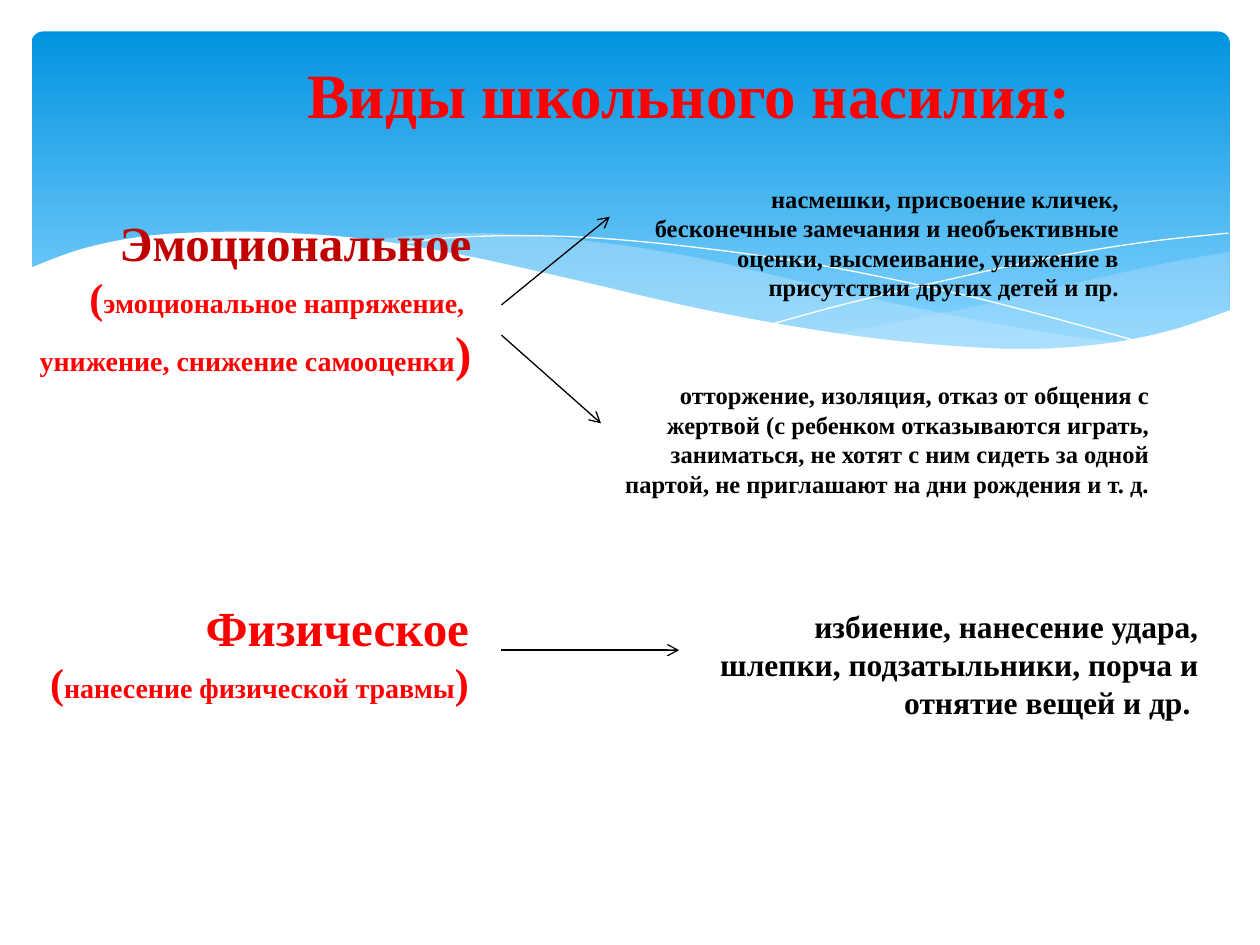
import pptx
import pptx.dml.color
import pptx.enum.shapes
import pptx.enum.text
import pptx.oxml
import pptx.oxml.ns
import pptx.util

Inches = pptx.util.Inches
Pt = pptx.util.Pt
RGBColor = pptx.dml.color.RGBColor

RED = RGBColor(0xFF, 0x00, 0x00)
DARK_RED = RGBColor(0xC0, 0x00, 0x00)
BLACK = RGBColor(0x00, 0x00, 0x00)
WHITE = RGBColor(0xFF, 0xFF, 0xFF)
PALE_BLUE = RGBColor(0xC6, 0xE7, 0xFC)
SKY_TOP = RGBColor(0x02, 0x93, 0xE0)
SKY_BOTTOM = RGBColor(0x83, 0xD3, 0xFE)

FONT = "Times New Roman"
NS = 'xmlns:a="http://schemas.openxmlformats.org/drawingml/2006/main"'

RIGHT_WAVE = [(9.76, 2), (9.35, 2.07), (8.61, 2.23), (7.79, 2.42), (7.06, 2.57), (6.61, 2.65)]
RIGHT_WAVE_BACK = [(6.61, 2.65), (7.05, 2.71), (7.57, 2.76), (8.03, 2.78), (8.54, 2.76),
                   (8.97, 2.7), (9.35, 2.62), (9.76, 2.47)]
MIDDLE_WAVE = [(8.93, 2.73), (8.07, 2.6), (7.06, 2.4), (6.29, 2.22), (5.55, 2.05),
               (4.89, 1.94), (4.2, 1.87), (3.61, 1.85), (2.86, 1.91)]
MIDDLE_WAVE_BACK = [(2.86, 1.91), (3.62, 2.03), (4.49, 2.22), (5.3, 2.4), (6.18, 2.58),
                    (6.95, 2.7), (7.61, 2.77), (8.18, 2.78), (8.57, 2.77), (8.93, 2.73)]
FALLING_LINE = [(3.09, 1.95), (3.53, 1.89), (4.16, 1.87), (4.89, 1.9), (5.82, 2),
                (6.65, 2.13), (7.6, 2.33), (8.31, 2.51), (9.07, 2.72)]
RISING_LINE = [(6.13, 2.57), (6.72, 2.41), (7.48, 2.23), (8.36, 2.04), (9.1, 1.92), (9.75, 1.85)]
WHITE_WAVE = [(9.77, 2.46), (9.3, 2.62), (8.75, 2.73), (8.09, 2.77), (7.26, 2.72),
              (6.48, 2.62), (5.55, 2.45), (4.47, 2.2), (3.65, 2.02), (2.92, 1.9),
              (2.3, 1.85), (1.77, 1.84), (1.19, 1.87), (0.67, 1.97), (0.23, 2.13)]


def smooth(knots, steps=6):
    ends = [knots[0], *knots, knots[-1]]
    points = [knots[0]]
    for a, b, c, d in zip(ends, ends[1:], ends[2:], ends[3:]):
        for i in range(1, steps + 1):
            t = i / steps
            points.append(tuple(
                (2 * q + (r - p) * t + (2 * p - 5 * q + 4 * r - u) * t ** 2
                 + (3 * q - p - 3 * r + u) * t ** 3) / 2
                for p, q, r, u in zip(a, b, c, d)))
    return points


def add_sky(s):
    sp = s.shapes.add_shape(pptx.enum.shapes.MSO_SHAPE.ROUNDED_RECTANGLE,
                            Inches(0.25), Inches(0.25), Inches(9.51), Inches(2.7))
    sp.adjustments[0] = 0.034
    sp.shadow.inherit = False
    sp.line.fill.background()
    sp.fill.gradient()
    sp.fill.gradient_angle = 270
    for stop, position, color in zip(sp.fill.gradient_stops, (0, 0.9), (SKY_TOP, SKY_BOTTOM)):
        stop.position = position
        stop.color.rgb = color


def add_outline(s, points, close):
    points = [(Inches(x), Inches(y)) for x, y in points]
    builder = s.shapes.build_freeform(*points[0])
    builder.add_line_segments(points[1:], close=close)
    sp = builder.convert_to_shape()
    sp.shadow.inherit = False
    return sp


def add_wave(s, points, color, opacity=100):
    sp = add_outline(s, points, True)
    sp.line.fill.background()
    sp.fill.solid()
    sp.fill.fore_color.rgb = color
    if opacity < 100:
        clr = sp.element.spPr.find(".//" + pptx.oxml.ns.qn("a:srgbClr"))
        clr.append(pptx.oxml.parse_xml(f'<a:alpha {NS} val="{opacity * 1000}"/>'))


def add_curve(s, points):
    sp = add_outline(s, points, False)
    sp.fill.background()
    sp.line.color.rgb = WHITE
    sp.line.width = Pt(0)


def fill_text(sp, box, paragraphs, wrap=True):
    for name, value in zip(("left", "top", "width", "height"), box):
        setattr(sp, name, Inches(value))
    tf = sp.text_frame
    frame_format = {"word_wrap": wrap,
                    "auto_size": pptx.enum.text.MSO_AUTO_SIZE.SHAPE_TO_FIT_TEXT,
                    "vertical_anchor": pptx.enum.text.MSO_ANCHOR.TOP}
    for name, value in frame_format.items():
        setattr(tf, name, value)
    for i, runs in enumerate(paragraphs):
        p = tf.add_paragraph() if i else tf.paragraphs[0]
        p.alignment = pptx.enum.text.PP_ALIGN.RIGHT
        for text, size, color in runs:
            r = p.add_run()
            r.text = text
            for name, value in {"name": FONT, "size": Pt(size), "bold": True}.items():
                setattr(r.font, name, value)
            r.font.color.rgb = color


def add_text(s, box, paragraphs, wrap=True):
    sp = s.shapes.add_textbox(0, 0, 0, 0)
    fill_text(sp, box, paragraphs, wrap)


def add_title(s, box, text):
    sp = s.shapes.title
    sp.element.getparent().append(sp.element)
    fill_text(sp, box, [[(text, 36, RED)]], wrap=False)


def add_arrow(s, x1, y1, x2, y2):
    sp = s.shapes.add_connector(pptx.enum.shapes.MSO_CONNECTOR.STRAIGHT,
                                Inches(x1), Inches(y1), Inches(x2), Inches(y2))
    sp.line.color.rgb = BLACK
    sp.line.width = Pt(0.75)
    sp.line.fill
    ln = sp.element.spPr.find(pptx.oxml.ns.qn("a:ln"))
    ln.append(pptx.oxml.parse_xml(f'<a:tailEnd {NS} type="arrow"/>'))
    sp.element.spPr.append(pptx.oxml.parse_xml(f"<a:effectLst {NS}/>"))


def main():
    prs = pptx.Presentation()
    prs.slide_width, prs.slide_height = Inches(10), Inches(7.5)
    s = prs.slides.add_slide(prs.slide_layouts[5])

    add_sky(s)
    add_wave(s, smooth(RIGHT_WAVE) + smooth(RIGHT_WAVE_BACK), PALE_BLUE, 29)
    add_wave(s, smooth(MIDDLE_WAVE) + smooth(MIDDLE_WAVE_BACK), PALE_BLUE, 40)
    add_curve(s, smooth(FALLING_LINE))
    add_curve(s, smooth(RISING_LINE))
    add_wave(s, smooth(WHITE_WAVE) + [(0.23, 3.29), (9.77, 3.29)], WHITE)

    add_title(s, (2.27, 0.39, 6.33, 0.71), "Виды школьного насилия:")
    add_text(s, (0.16, 1.64, 3.68, 1.45), [
        [("Эмоциональное", 28, DARK_RED)],
        [("(", 24, RED), ("эмоциональное напряжение, ", 16, RED)],
        [("унижение, снижение самооценки", 16, RED), (")", 28, RED)],
    ], wrap=False)
    add_text(s, (0.23, 4.69, 3.59, 0.98), [
        [("Физическое", 28, RED)],
        [("(", 24, RED), ("нанесение физической травмы", 16, RED), (")", 24, RED)],
    ])

    examples = [
        ((5, 1.41, 3.98, 1.04), 14,
         "насмешки, присвоение кличек, бесконечные замечания и необъективные оценки, "
         "высмеивание, унижение в присутствии других детей и пр."),
        ((4.84, 2.97, 4.38, 1.04), 14,
         "отторжение, изоляция, отказ от общения с жертвой (с ребенком отказываются играть, "
         "заниматься, не хотят с ним сидеть за одной партой, не приглашают на дни рождения и т. д."),
        ((5.47, 4.77, 4.14, 1.01), 18,
         "избиение, нанесение удара, шлепки, подзатыльники, порча и отнятие вещей и др. "),
    ]
    for box, size, text in examples:
        add_text(s, box, [[(text, size, BLACK)]])

    for ends in ((3.98, 2.42, 4.84, 1.72), (3.98, 2.66, 4.77, 3.36), (3.98, 5.16, 5.39, 5.16)):
        add_arrow(s, *ends)

    prs.save("out.pptx")


if __name__ == "__main__":
    main()
